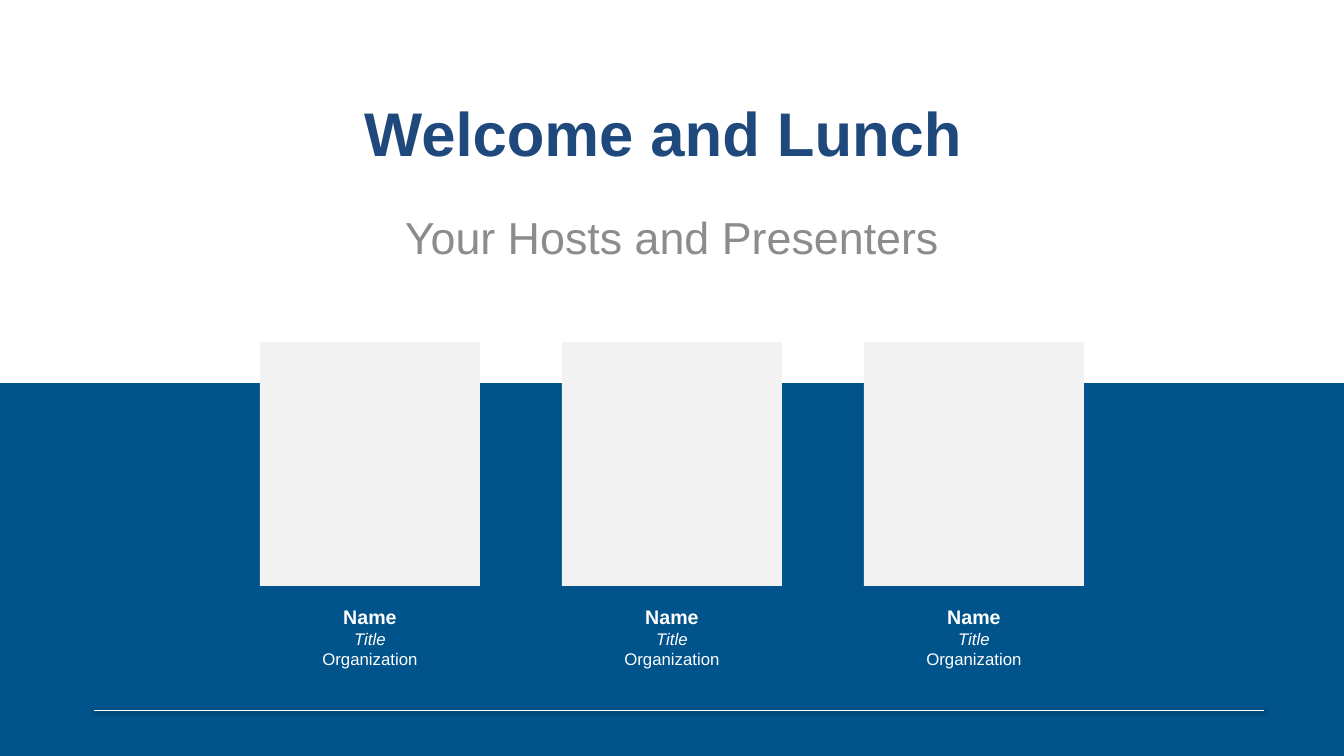
from lxml import etree
from pptx import Presentation
from pptx.dml.color import RGBColor
from pptx.enum.shapes import MSO_CONNECTOR, MSO_SHAPE
from pptx.enum.text import MSO_ANCHOR, MSO_AUTO_SIZE, PP_ALIGN
from pptx.oxml.ns import nsdecls
from pptx.util import Pt

# Content
TITLE = "Welcome and Lunch "  # the trailing space shifts the centred title
SUBTITLE = "Your Hosts and Presenters"
HOSTS = [("Name", "Title", "Organization")] * 3
HOST_STYLES = [  # size, bold, italic
    (14, True, False),
    (12, False, True),
    (12, False, False),
]

# Layout in px
PAGE_WIDTH, PAGE_HEIGHT = 1344, 756
EMU_PER_PX = 914400 / 100.8
BANDS = [(0, 645, PAGE_WIDTH, 111), (0, 383, PAGE_WIDTH, 276)]
RULE_LEFT, RULE_RIGHT, RULE_TOP = 94, 1264, 710
TITLE_BOX = (101, 51, 1142, 162)
SUBTITLE_BOX = (202, 205, 940, 194)
PORTRAIT_TOP, PORTRAIT_WIDTH, PORTRAIT_HEIGHT = 342, 220, 244
PORTRAIT_STEP = 302
CAPTION_TOP, CAPTION_WIDTH, CAPTION_HEIGHT = 600, 214, 75

BLUE, NAVY, GRAY, PALE, WHITE = "00538B", "1F497D", "8C8C8C", "F2F2F2", "FFFFFF"
RULE_SHADOW = (
    f'<a:effectLst {nsdecls("a")}>'
    '<a:outerShdw blurRad="39370" dist="20320" dir="5400000" rotWithShape="0">'
    '<a:srgbClr val="000000"><a:alpha val="38000"/></a:srgbClr>'
    '</a:outerShdw></a:effectLst>'
)


def px(length):
    return round(length * EMU_PER_PX)


def color(value):
    return RGBColor.from_string(value)


def add_block(page, area, fill):
    block = page.shapes.add_shape(MSO_SHAPE.RECTANGLE, *map(px, area))
    block.shadow.inherit = False
    block.fill.solid()
    block.fill.fore_color.rgb = color(fill)
    block.line.fill.background()


def style(paragraph, size, ink, bold=False, italic=False):
    paragraph.alignment = PP_ALIGN.CENTER
    font = paragraph.font
    font.name, font.size, font.bold, font.italic = "Arial", Pt(size), bold, italic
    font.color.rgb = color(ink)


def fill_placeholder(box, area, text, anchor, size, ink, bold):
    box.left, box.top, box.width, box.height = map(px, area)
    frame = box.text_frame
    frame.text = text
    frame.auto_size = MSO_AUTO_SIZE.NONE
    frame.vertical_anchor = anchor
    style(frame.paragraphs[0], size, ink, bold)


def add_caption(page, left, lines):
    area = (left, CAPTION_TOP, CAPTION_WIDTH, CAPTION_HEIGHT)
    frame = page.shapes.add_textbox(*map(px, area)).text_frame
    frame.word_wrap = True
    frame.auto_size = MSO_AUTO_SIZE.SHAPE_TO_FIT_TEXT
    frame.text = "\n".join(lines)
    for paragraph, (size, bold, italic) in zip(frame.paragraphs, HOST_STYLES):
        style(paragraph, size, WHITE, bold, italic)


def main():
    deck = Presentation()
    deck.slide_width, deck.slide_height = px(PAGE_WIDTH), px(PAGE_HEIGHT)
    page = deck.slides.add_slide(deck.slide_layouts[0])
    title, subtitle = page.placeholders

    # Blue lower half with a thin rule
    for band in BANDS:
        add_block(page, band, BLUE)
    rule = page.shapes.add_connector(
        MSO_CONNECTOR.STRAIGHT,
        px(RULE_LEFT), px(RULE_TOP), px(RULE_RIGHT), px(RULE_TOP))
    rule.line.color.rgb = color(WHITE)
    rule.line.width = Pt(0.25)
    rule._element.spPr.append(etree.fromstring(RULE_SHADOW))

    # Headings, raised above the bands
    fill_placeholder(title, TITLE_BOX, TITLE, MSO_ANCHOR.MIDDLE, 44, NAVY, True)
    fill_placeholder(subtitle, SUBTITLE_BOX, SUBTITLE, MSO_ANCHOR.TOP, 32, GRAY, False)
    for heading in (title, subtitle):
        page.shapes._spTree.append(heading._element)

    # Portrait frames, centred as a row, each with a caption
    row_width = PORTRAIT_STEP * (len(HOSTS) - 1) + PORTRAIT_WIDTH
    row_left = (PAGE_WIDTH - row_width) // 2
    for index, host in enumerate(HOSTS):
        left = row_left + index * PORTRAIT_STEP
        add_block(page, (left, PORTRAIT_TOP, PORTRAIT_WIDTH, PORTRAIT_HEIGHT), PALE)
        add_caption(page, left + (PORTRAIT_WIDTH - CAPTION_WIDTH) // 2, host)

    deck.save("out.pptx")


if __name__ == "__main__":
    main()
